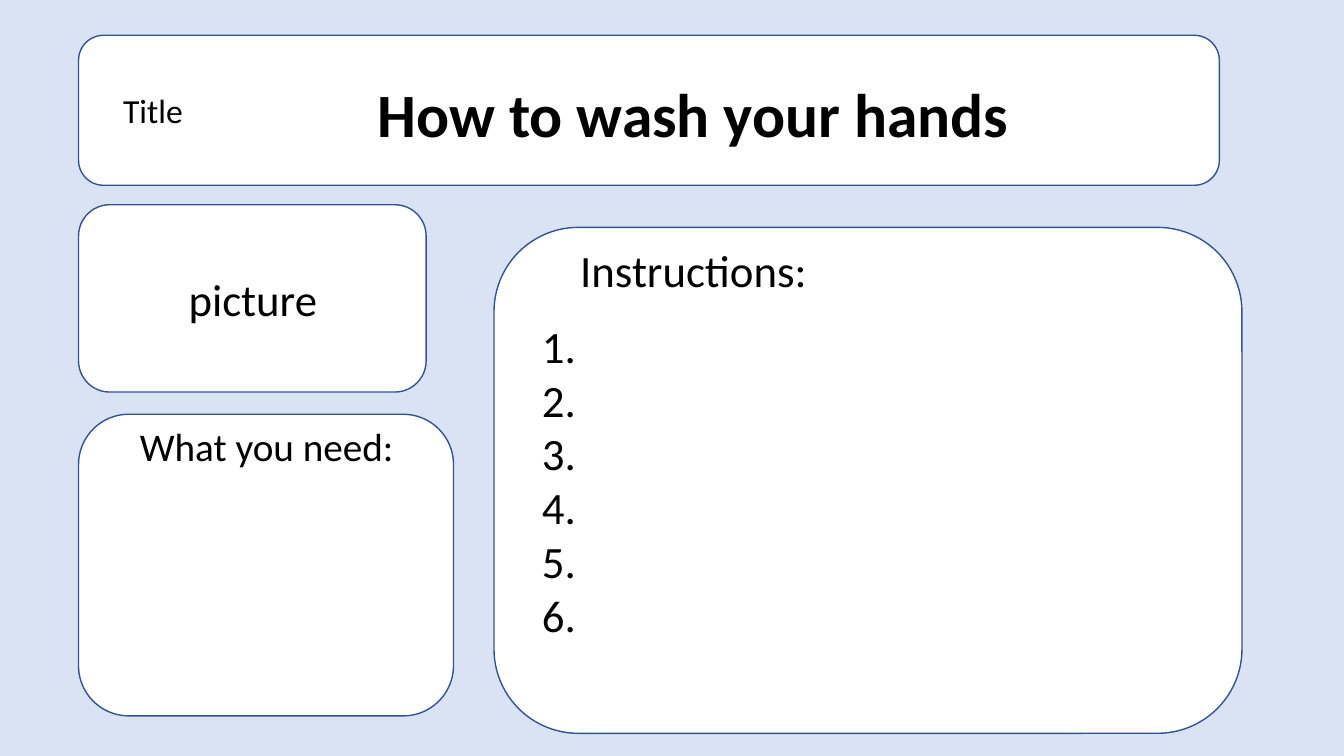
from dataclasses import dataclass

from pptx import Presentation
from pptx.dml.color import RGBColor
from pptx.enum.shapes import MSO_SHAPE
from pptx.enum.text import MSO_ANCHOR, MSO_AUTO_SIZE, PP_ALIGN
from pptx.util import Cm, Pt


@dataclass(frozen=True)
class Theme:
    font: str = "Calibri"
    background: RGBColor = RGBColor(0xDA, 0xE3, 0xF3)
    panel: RGBColor = RGBColor(0xFF, 0xFF, 0xFF)
    outline: RGBColor = RGBColor(0x32, 0x54, 0x91)
    text: RGBColor = RGBColor(0, 0, 0)
    outline_width: int = 1
    heading_size: int = 44
    body_size: int = 32
    list_title_size: int = 28
    label_size: int = 24


class WorksheetSlide:
    def __init__(self, presentation, theme):
        self.theme = theme
        self.slide = presentation.slides.add_slide(presentation.slide_layouts[6])
        fill = self.slide.background.fill
        fill.solid()
        fill.fore_color.rgb = theme.background

    def panel(self, left, top, width, height):
        shape = self.slide.shapes.add_shape(
            MSO_SHAPE.ROUNDED_RECTANGLE, Cm(left), Cm(top), Cm(width), Cm(height)
        )
        shape.shadow.inherit = False
        shape.fill.solid()
        shape.fill.fore_color.rgb = self.theme.panel
        shape.line.color.rgb = self.theme.outline
        shape.line.width = Pt(self.theme.outline_width)

    def text(self, lines, left, top, width, height, size, wrap=False):
        shape = self.slide.shapes.add_textbox(Cm(left), Cm(top), Cm(width), Cm(height))
        frame = shape.text_frame
        frame.word_wrap = wrap
        frame.auto_size = MSO_AUTO_SIZE.SHAPE_TO_FIT_TEXT
        frame.text = "\n".join(lines)
        for paragraph in frame.paragraphs:
            paragraph.alignment = PP_ALIGN.CENTER
            paragraph.font.name = self.theme.font
            paragraph.font.size = Pt(size)
            paragraph.font.color.rgb = self.theme.text
        return frame

    def heading(self, words, left, top, width, height):
        frame = self.text([words], left, top, width, height, self.theme.heading_size, wrap=True)
        frame.auto_size = MSO_AUTO_SIZE.NONE
        frame.vertical_anchor = MSO_ANCHOR.MIDDLE
        paragraph = frame.paragraphs[0]
        paragraph.font.bold = True
        paragraph.line_spacing = 0.9


def main():
    presentation = Presentation()
    presentation.slide_width = Cm(33.87)
    presentation.slide_height = Cm(19.05)
    theme = Theme()
    worksheet = WorksheetSlide(presentation, theme)

    panel_left = 1.98
    worksheet.panel(panel_left, 0.89, 28.75, 3.78)
    worksheet.panel(panel_left, 10.44, 9.45, 7.6)
    worksheet.panel(12.45, 5.73, 18.85, 12.75)

    worksheet.text(["Title"], 1.57, 2.13, 4.57, 1.28, theme.label_size, wrap=True)
    worksheet.text(["What you need:"], 2.82, 10.52, 7.8, 1.45, theme.list_title_size)
    worksheet.text(["Instructions:"], 13.77, 5.99, 7.42, 1.62, theme.body_size)
    steps = [f"{number}." for number in range(1, 7)]
    worksheet.text(steps, 13.31, 7.9, 1.55, 8.46, theme.body_size)

    worksheet.panel(panel_left, 5.16, 8.76, 4.72)
    worksheet.text(["picture"], 4.24, 6.73, 4.27, 1.62, theme.body_size)
    worksheet.heading("How to wash your hands", 2.87, 1.5, 29.21, 2.92)

    presentation.save("out.pptx")


if __name__ == "__main__":
    main()
